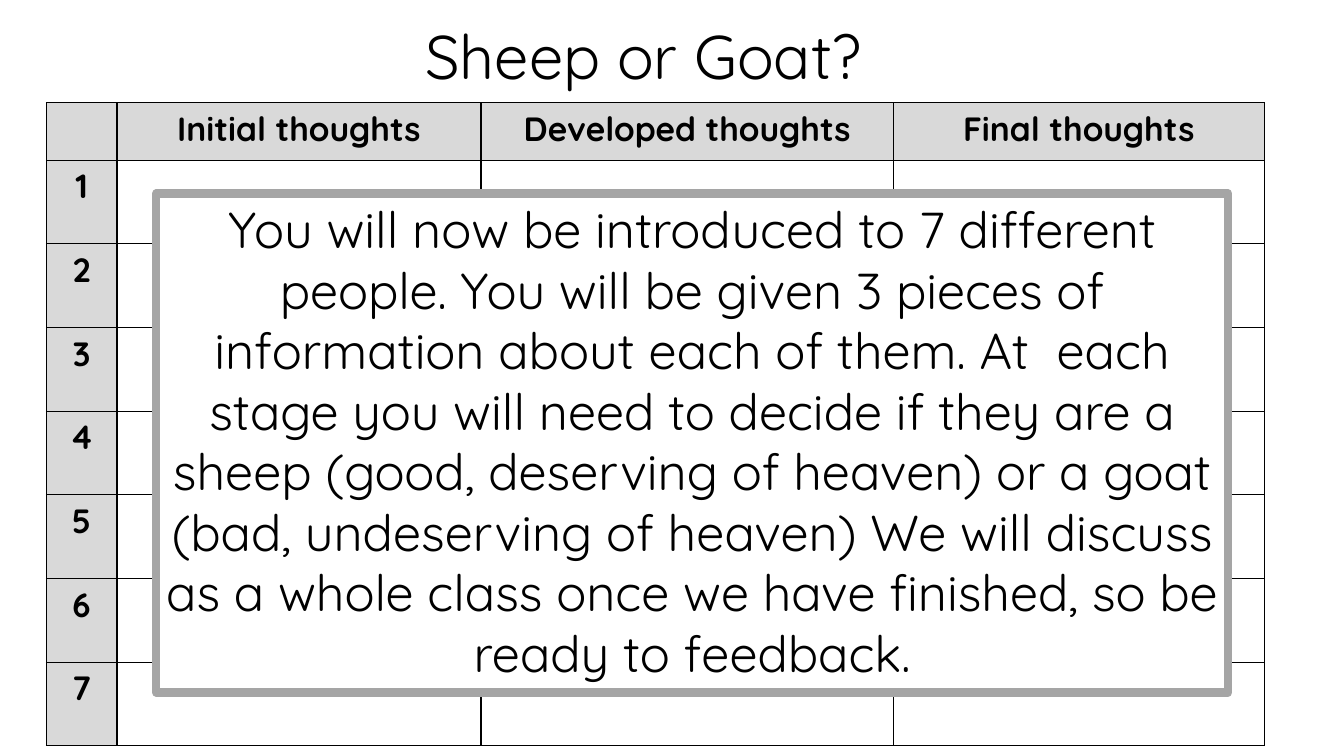
"""Build the "Sheep or Goat?" lesson slide."""
from dataclasses import dataclass

import pptx
import pptx.dml.color
import pptx.enum.shapes
import pptx.enum.text
import pptx.oxml
import pptx.oxml.ns
import pptx.util
from pptx.util import Inches


@dataclass(frozen=True)
class Theme:
    """Colours, font and type sizes of the slide."""
    font: str = "Quicksand"
    ink: str = "000000"
    paper: str = "FFFFFF"
    heading_fill: str = "D9D9D9"
    frame: str = "A5A5A5"
    title_size: int = 44
    message_size: int = 36
    table_size: int = 24


THEME = Theme()
HEADINGS = ["Initial thoughts", "Developed thoughts", "Final thoughts"]
PEOPLE = 7
COLUMN_WIDTHS = [0.7, 3.61, 4.09, 3.68]
HEADER_HEIGHT = 0.57
ROW_HEIGHT = 0.83
MESSAGE = (
    "You will now be introduced to 7 different people. You will be given "
    "3 pieces of information about each of them. At  each stage you will need "
    "to decide if they are a sheep (good, deserving of heaven) or a goat "
    "(bad, undeserving of heaven) We will discuss as a whole class once we "
    "have finished, so be ready to feedback."
)


def colour(value):
    """Return an RGB colour from its hexadecimal value."""
    return pptx.dml.color.RGBColor.from_string(value)


def write_text(text_frame, text, *, size, bold=False):
    """Write one centred paragraph in the theme font."""
    paragraph = text_frame.paragraphs[0]
    paragraph.alignment = pptx.enum.text.PP_ALIGN.CENTER
    run = paragraph.add_run()
    run.text = text
    run.font.name = THEME.font
    run.font.size = pptx.util.Pt(size)
    run.font.bold = bold
    run.font.color.rgb = colour(THEME.ink)


def fill_cell(cell, fill):
    """Give a cell a solid fill and thin borders on all sides."""
    properties = cell._tc.get_or_add_tcPr()
    for side in ("lnL", "lnR", "lnT", "lnB"):
        properties.append(pptx.oxml.parse_xml(
            f'<a:{side} {pptx.oxml.ns.nsdecls("a")} w="12700"><a:solidFill>'
            f'<a:srgbClr val="{THEME.ink}"/></a:solidFill></a:{side}>'
        ))
    cell.fill.solid()
    cell.fill.fore_color.rgb = colour(fill)


def add_thoughts_table(slide):
    """Add the grid of people and their three stages of thoughts."""
    height = HEADER_HEIGHT + PEOPLE * ROW_HEIGHT
    table = slide.shapes.add_table(
        PEOPLE + 1, len(COLUMN_WIDTHS), Inches(0.46), Inches(1.02),
        Inches(sum(COLUMN_WIDTHS)), Inches(height),
    ).table
    for column, width in zip(table.columns, COLUMN_WIDTHS):
        column.width = Inches(width)
    rows = [["", *HEADINGS]]
    rows += [[str(number), "", "", ""] for number in range(1, PEOPLE + 1)]
    for row_index, texts in enumerate(rows):
        table.rows[row_index].height = Inches(ROW_HEIGHT if row_index else HEADER_HEIGHT)
        for column_index, text in enumerate(texts):
            cell = table.cell(row_index, column_index)
            is_heading = row_index == 0 or column_index == 0
            fill_cell(cell, THEME.heading_fill if is_heading else THEME.paper)
            if text:
                write_text(cell.text_frame, text, size=THEME.table_size, bold=True)


def add_title(slide, text):
    """Add the slide title."""
    box = slide.shapes.add_textbox(Inches(3.9), Inches(0.13), Inches(4.97), Inches(0.84))
    box.text_frame.word_wrap = False
    box.text_frame.auto_size = pptx.enum.text.MSO_AUTO_SIZE.SHAPE_TO_FIT_TEXT
    write_text(box.text_frame, text, size=THEME.title_size)


def add_message(slide, text):
    """Add the framed message that lies over the table."""
    shape = slide.shapes.add_shape(
        pptx.enum.shapes.MSO_SHAPE.RECTANGLE,
        Inches(1.55), Inches(1.92), Inches(10.63), Inches(4.95),
    )
    shape.shadow.inherit = False
    shape.fill.solid()
    shape.fill.fore_color.rgb = colour(THEME.paper)
    shape.line.color.rgb = colour(THEME.frame)
    shape.line.width = pptx.util.Pt(6)
    text_frame = shape.text_frame
    text_frame.word_wrap = True
    text_frame.auto_size = pptx.enum.text.MSO_AUTO_SIZE.SHAPE_TO_FIT_TEXT
    text_frame.vertical_anchor = pptx.enum.text.MSO_ANCHOR.TOP
    write_text(text_frame, text, size=THEME.message_size)


def main():
    """Build and save the presentation."""
    presentation = pptx.Presentation()
    presentation.slide_width = Inches(13.33)
    presentation.slide_height = Inches(7.5)
    slide = presentation.slides.add_slide(presentation.slide_layouts[6])
    add_thoughts_table(slide)
    add_title(slide, "Sheep or Goat?")
    add_message(slide, MESSAGE)
    presentation.save("out.pptx")


if __name__ == "__main__":
    main()
